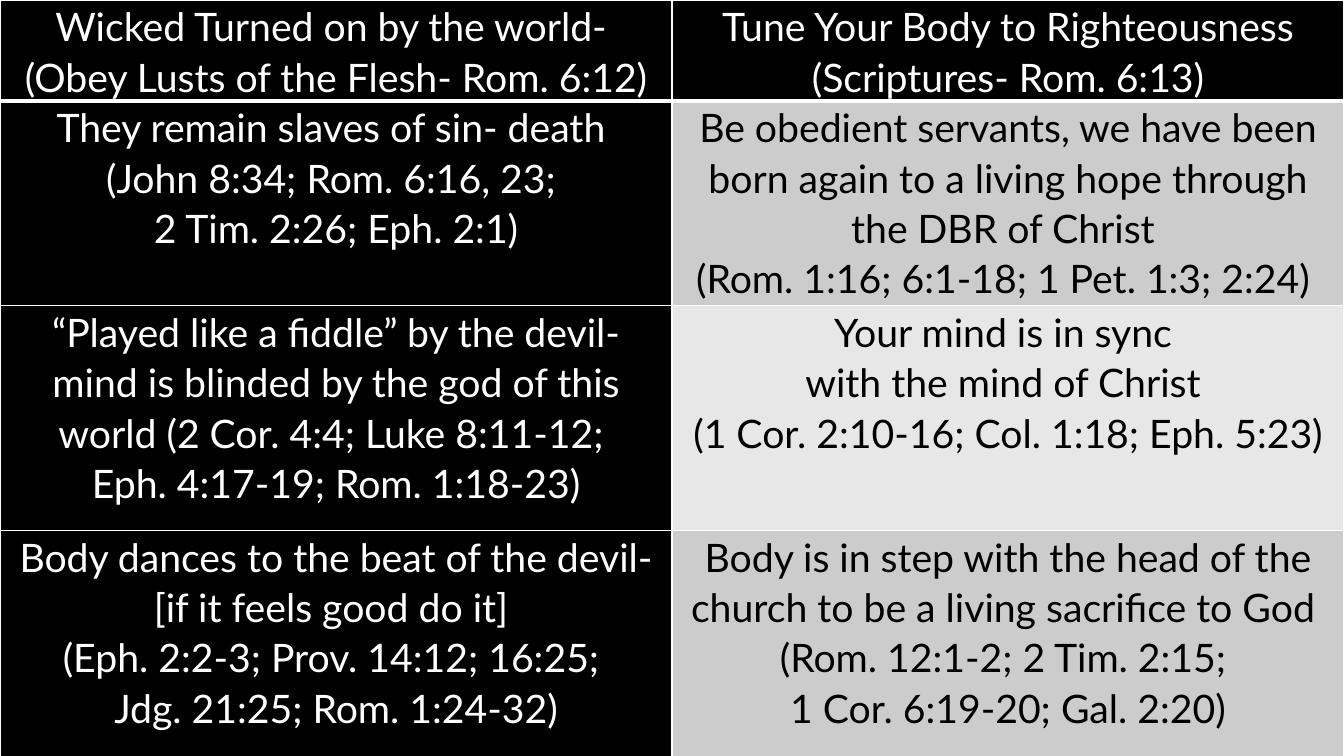
from lxml.etree import SubElement
from pptx import Presentation
from pptx.dml.color import RGBColor
from pptx.enum.text import PP_ALIGN
from pptx.oxml.ns import qn
from pptx.util import Pt

COLORS = {
    "black": "000000",
    "white": "FFFFFF",
    "band": "CCCCCC",
    "light_band": "E7E7E7",
}
FONT = "Lato"
SLIDE_WIDTH, SLIDE_HEIGHT = 960, 540
ROW_HEIGHTS = [71.28, 146.16, 160.56, 162.72]
RIGHT_FILLS = ["black", "band", "light_band", "band"]

# Each row pairs the wicked (left) with the righteous (right).
CONTRASTS = [
    (
        ["Wicked Turned on by the world- ",
         "(Obey Lusts of the Flesh- Rom. 6:12)"],
        ["Tune Your Body to Righteousness (Scriptures- Rom. 6:13)"],
    ),
    (
        ["They remain slaves of sin- death ",
         "(John 8:34; Rom. 6:16, 23; ",
         "2 Tim. 2:26; Eph. 2:1)"],
        ["Be obedient servants, we have been born again to a living hope "
         "through the DBR of Christ ",
         "(Rom. 1:16; 6:1-18; 1 Pet. 1:3; 2:24) "],
    ),
    (
        ["“Played like a fiddle” by the devil- mind is blinded by the god "
         "of this world (2 Cor. 4:4; Luke 8:11-12; ",
         "Eph. 4:17-19; Rom. 1:18-23)"],
        ["Your mind is in sync ",
         "with the mind of Christ ",
         "(1 Cor. 2:10-16; Col. 1:18; Eph. 5:23)"],
    ),
    (
        ["Body dances to the beat of the devil- [if it feels good do it] ",
         "(Eph. 2:2-3; Prov. 14:12; 16:25; ",
         "Jdg. 21:25; Rom. 1:24-32)"],
        ["Body is in step with the head of the church to be a living "
         "sacrifice to God ",
         "(Rom. 12:1-2; 2 Tim. 2:15; ",
         "1 Cor. 6:19-20; Gal. 2:20)"],
    ),
]


def rgb(name):
    return RGBColor.from_string(COLORS[name])


def set_borders(cell, top, bottom):
    """Draw white borders, 1 pt at the sides; call before setting the fill."""
    properties = cell._tc.get_or_add_tcPr()
    for side, width in (("L", 1), ("R", 1), ("T", top), ("B", bottom)):
        line = SubElement(properties, qn(f"a:ln{side}"), w=str(Pt(width)))
        fill = SubElement(line, qn("a:solidFill"))
        SubElement(fill, qn("a:srgbClr"), val=COLORS["white"])


def write_cell(cell, lines, fill, ink):
    cell.margin_left = cell.margin_right = Pt(5)
    cell.margin_top = cell.margin_bottom = Pt(0)
    cell.fill.solid()
    cell.fill.fore_color.rgb = rgb(fill)
    cell.text_frame.text = "\n".join(lines)
    for paragraph in cell.text_frame.paragraphs:
        paragraph.alignment = PP_ALIGN.CENTER
        paragraph.line_spacing = 1.07
        for run in paragraph.runs:
            run.font.name = FONT
            run.font.size = Pt(28)
            run.font.color.rgb = rgb(ink)


def add_contrast_table(slide, left, top, width):
    frame = slide.shapes.add_table(
        len(CONTRASTS), 2, Pt(left), Pt(top), Pt(width), Pt(sum(ROW_HEIGHTS)))
    table = frame.table
    for column in table.columns:
        column.width = Pt(width / 2)
    for r, sides in enumerate(CONTRASTS):
        table.rows[r].height = Pt(ROW_HEIGHTS[r])
        for c, (lines, fill) in enumerate(zip(sides, ("black", RIGHT_FILLS[r]))):
            cell = table.cell(r, c)
            set_borders(cell, top=3 if r == 1 else 1, bottom=3 if r == 0 else 1)
            write_cell(cell, lines, fill, "white" if fill == "black" else "black")


def main():
    deck = Presentation()
    deck.slide_width, deck.slide_height = Pt(SLIDE_WIDTH), Pt(SLIDE_HEIGHT)
    slide = deck.slides.add_slide(deck.slide_layouts[6])
    slide.background.fill.solid()
    slide.background.fill.fore_color.rgb = rgb("black")
    add_contrast_table(slide, 0, 0, SLIDE_WIDTH)
    deck.save("out.pptx")


if __name__ == "__main__":
    main()
